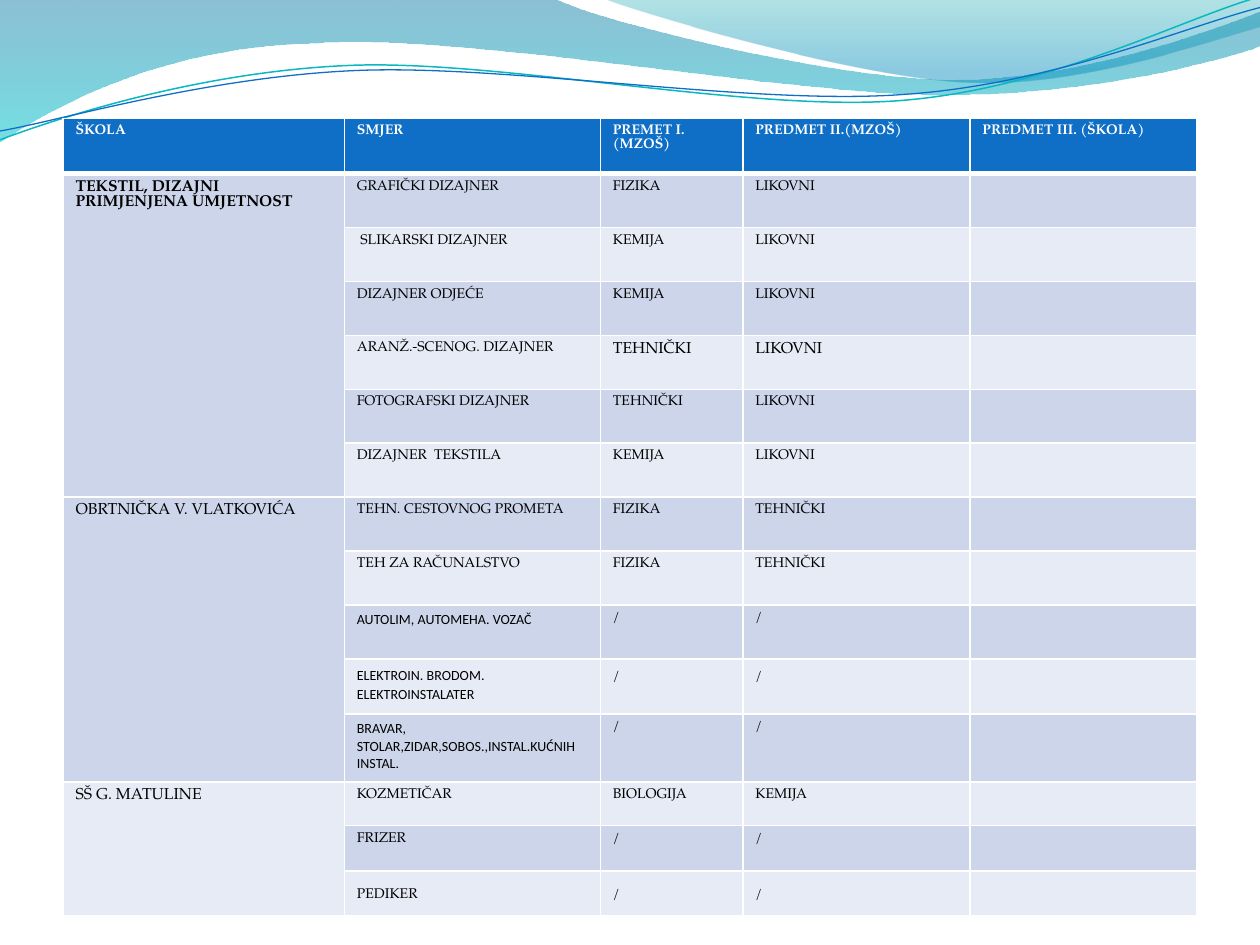
from lxml.etree import SubElement
from pptx import Presentation
from pptx.dml.color import RGBColor
from pptx.oxml.ns import qn
from pptx.util import Inches, Pt

SERIF, SANS = "TeX Gyre Pagella", "Calibri"
BLUE, DARK, LIGHT, WHITE, BLACK = "0F6FC6", "CCD5EA", "E7EBF5", "FFFFFF", "000000"
COLUMNS = [2.23, 2.03, 1.13, 1.8, 1.8]
ROWS = [0.44] + [0.43] * 9 + [0.44, 0.54, 0.35, 0.36, 0.36]
HEADER = ["ŠKOLA", "SMJER", "PREMET I. (MZOŠ)", "PREDMET II.(MZOŠ)",
          "PREDMET III. (ŠKOLA)"]
SCHOOLS = [
    ("TEKSTIL, DIZAJNI PRIMJENJENA UMJETNOST", [
        ("GRAFIČKI DIZAJNER", "FIZIKA", "LIKOVNI"),
        (" SLIKARSKI DIZAJNER", "KEMIJA", "LIKOVNI"),
        ("DIZAJNER ODJEĆE", "KEMIJA", "LIKOVNI"),
        ("ARANŽ.-SCENOG. DIZAJNER", "TEHNIČKI", "LIKOVNI"),
        ("FOTOGRAFSKI DIZAJNER", "TEHNIČKI", "LIKOVNI"),
        ("DIZAJNER  TEKSTILA", "KEMIJA", "LIKOVNI")]),
    ("OBRTNIČKA V. VLATKOVIĆA", [
        ("TEHN. CESTOVNOG PROMETA", "FIZIKA", "TEHNIČKI"),
        ("TEH ZA RAČUNALSTVO", "FIZIKA", "TEHNIČKI"),
        ("AUTOLIM, AUTOMEHA. VOZAČ", "/", "/"),
        ("ELEKTROIN. BRODOM. ELEKTROINSTALATER", "/", "/"),
        ("BRAVAR, STOLAR,ZIDAR,SOBOS.,INSTAL.KUĆNIH INSTAL.", "/", "/")]),
    ("SŠ G. MATULINE", [
        ("KOZMETIČAR", "BIOLOGIJA", "KEMIJA"),
        ("FRIZER", "/", "/"),
        ("PEDIKER", "/", "/")]),
]
LARGE_CELLS = {(4, 2), (4, 3)}
SANS_ROWS = {9, 10, 11}
LINE_SPACING = {10: 10.8, 14: 14.3}

BANDS = [
    ([(0, 0), (4.4, -0.01),
      (4.76, 0.17, 6.64, 0.63, 7.58, 0.63), (8.53, 0.63, 9.58, 0.26, 10, 0.09),
      (10.01, 0.36), (9.83, 0.44, 8.7, 0.76, 7.46, 0.75),
      (6.22, 0.75, 3.82, 0.28, 2.57, 0.34), (1.29, 0.36, 0.46, 0.83, -0.01, 1.13)],
     [(0, "0074A1", 45), (1, "00C6CF", 55)]),
    ([(4.79, -0.01), (5.09, 0.11, 6.82, 0.62, 7.69, 0.65),
      (8.56, 0.69, 9.61, 0.32, 10, 0.21), (10, 0)],
     [(0, "00A1A9", 30), (0.8, "008BBF", 45)]),
]
STRANDS = [
    ([(0, 1.11), (0.48, 0.93, 1.58, 0.57, 2.77, 0.52),
      (3.95, 0.47, 5.93, 0.89, 7.13, 0.8), (8.33, 0.71, 9.38, 0.15, 9.98, -0.02)],
     "0AB8BF", 0.85),
    ([(0, 1.04), (0.47, 0.96, 1.64, 0.61, 2.83, 0.56),
      (4.03, 0.51, 5.97, 0.84, 7.17, 0.75), (8.36, 0.67, 9.41, 0.21, 10, 0.06)],
     BLUE, 0.75),
]


def rgb(value):
    """Turn a hex string into a colour."""
    return RGBColor.from_string(value)


def bend(sp, segments):
    """Join the three line points of each six-number segment into a curve."""
    lines = iter(list(sp._element.iter(qn("a:lnTo"))))
    for seg in segments[1:]:
        line = next(lines)
        if len(seg) == 6:
            line.tag = qn("a:cubicBezTo")
            for _ in range(2):
                extra = next(lines)
                line.append(extra[0])
                extra.getparent().remove(extra)


def add_path(s, segments, box, close):
    """Draw segments on a grid ten units wide inside the box."""
    left, top, width = box
    points = [(round(seg[i] * 100), round(seg[i + 1] * 100))
              for seg in segments for i in range(0, len(seg), 2)]
    builder = s.shapes.build_freeform(*points[0], scale=width / 1000)
    builder.add_line_segments(points[1:], close=close)
    sp = builder.convert_to_shape(left, top)
    bend(sp, segments)
    sp.shadow.inherit = False
    return sp


def add_waves(s, box):
    """Place the gradient bands and thin strands across the top."""
    for segments, stops in BANDS:
        sp = add_path(s, segments, box, True)
        sp.line.fill.background()
        sp.fill.gradient()
        sp.fill.gradient_angle = 270
        for stop, (position, color, _) in zip(sp.fill.gradient_stops, stops):
            stop.position = position
            stop.color.rgb = rgb(color)
        for node, (_, _, opacity) in zip(sp._element.spPr.iter(qn("a:srgbClr")), stops):
            SubElement(node, qn("a:alpha"), val=str(opacity * 1000))
    for segments, color, weight in STRANDS:
        sp = add_path(s, segments, box, False)
        sp.fill.background()
        sp.line.color.rgb = rgb(color)
        sp.line.width = Pt(weight)


def set_borders(cell, bottom):
    """Give a cell white borders before its fill is set."""
    tcPr = cell._tc.get_or_add_tcPr()
    for side, weight in zip("LRTB", (1, 1, 1, bottom)):
        ln = SubElement(tcPr, qn(f"a:ln{side}"), w=str(Pt(weight)))
        SubElement(SubElement(ln, qn("a:solidFill")), qn("a:srgbClr"), val=WHITE)


def fill_cell(cell, text, fill, size=8, font=SERIF, color=BLACK, bold=False,
              spacing=None, bottom=1):
    """Write and format one table cell."""
    set_borders(cell, bottom)
    cell.fill.solid()
    cell.fill.fore_color.rgb = rgb(fill)
    p = cell.text_frame.paragraphs[0]
    if not text:
        SubElement(p._p, qn("a:endParaRPr"), sz=str(size * 100))
        return
    p.text = text
    if spacing:
        p.line_spacing = Pt(spacing)
    f = p.runs[0].font
    f.size, f.name, f.bold = Pt(size), font, bold
    f.color.rgb = rgb(color)


def add_subjects(s, box):
    """Place the table of schools, courses and subjects."""
    left, top, width, height = box
    table = s.shapes.add_table(len(ROWS), len(COLUMNS), *box).table
    for column, share in zip(table.columns, COLUMNS):
        column.width = int(width * share / sum(COLUMNS))
    for row, share in zip(table.rows, ROWS):
        row.height = int(height * share / sum(ROWS))
    for c, text in enumerate(HEADER):
        fill_cell(table.cell(0, c), text, BLUE, color=WHITE, bold=True, bottom=3)
    r = 1
    for school, courses in SCHOOLS:
        first = r
        for course in courses:
            fill = DARK if r % 2 else LIGHT
            texts = (school if r == first else "", *course, "")
            for c, text in enumerate(texts):
                fill_cell(table.cell(r, c), text, fill,
                          size=9 if c == 0 or (r, c) in LARGE_CELLS else 8,
                          font=SANS if c == 1 and r in SANS_ROWS else SERIF,
                          bold=c == 0 and first == 1,
                          spacing=LINE_SPACING.get(r) if c else None)
            r += 1
        table.cell(first, 0).merge(table.cell(r - 1, 0))


def main():
    """Build the slide and save it."""
    prs = Presentation()
    prs.slide_width, prs.slide_height = Inches(10), Inches(7.5)
    unit = prs.slide_width / 10
    s = prs.slides.add_slide(prs.slide_layouts[6])
    add_waves(s, (0, 0, prs.slide_width))
    add_subjects(s, [int(unit * n) for n in (0.5, 0.94, 9, 6.33)])
    prs.save("out.pptx")


if __name__ == "__main__":
    main()
